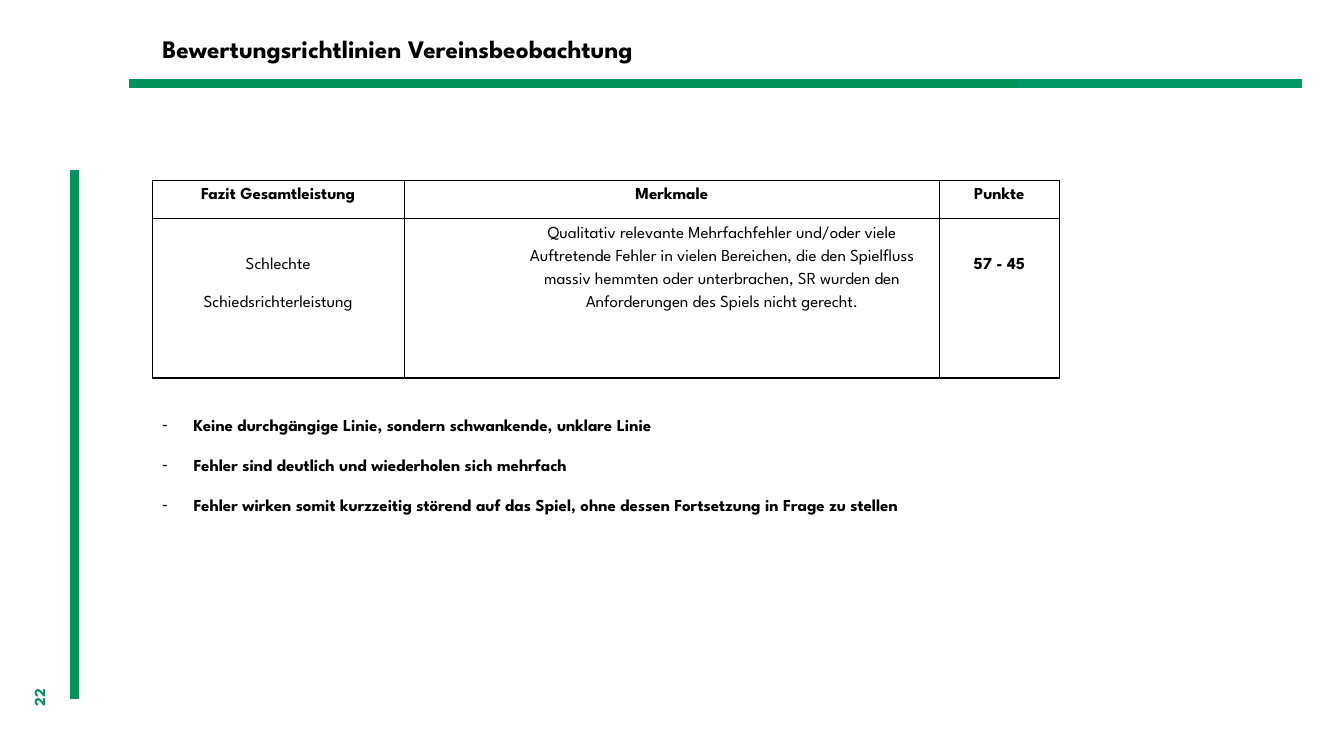
from pptx import Presentation, util as u
from pptx.dml.color import RGBColor
from pptx.enum import shapes, text
from pptx.oxml.ns import qn
from lxml import etree

Pt = u.Pt
GREEN = RGBColor(0x00, 0x92, 0x5B)
MASTER_GREEN = RGBColor(0x01, 0x98, 0x65)
BLACK = RGBColor(0, 0, 0)
CENTER = text.PP_ALIGN.CENTER
LEFT = text.PP_ALIGN.LEFT


class SlideBuilder:
    """Holds the style and the current slide."""

    font = {"name": "League Spartan", "size": Pt(12), "bold": True}

    def __init__(self, prs):
        self.s = prs.slides.add_slide(prs.slide_layouts[5])

    def add_words(self, p, words, color=BLACK, para=None, **font):
        for key, value in (para or {}).items():
            setattr(p, key, value)
        r = p.add_run()
        r.text = words
        for key, value in {**self.font, **font}.items():
            setattr(r.font, key, value)
        r.font.color.rgb = color

    def line(self, x1, y1, x2, y2, color):
        c = self.s.shapes.add_connector(
            shapes.MSO_CONNECTOR.STRAIGHT, Pt(x1), Pt(y1), Pt(x2), Pt(y2))
        c.line.color.rgb = color
        c.line.width = Pt(6)
        etree.SubElement(c._element.spPr, qn("a:effectLst"))

    def title(self, x, y, w, h, words):
        sp = self.s.shapes.title
        sp.left, sp.top, sp.width, sp.height = Pt(x), Pt(y), Pt(w), Pt(h)
        tf = sp.text_frame
        tf.vertical_anchor = text.MSO_ANCHOR.MIDDLE
        tf.auto_size = text.MSO_AUTO_SIZE.NONE
        self.add_words(tf.paragraphs[0], words, size=Pt(18),
                       para={"alignment": LEFT, "line_spacing": 0.9})

    def box(self, x, y, w, h, rotation=0):
        sp = self.s.shapes.add_textbox(Pt(x), Pt(y), Pt(w), Pt(h))
        sp.rotation = rotation
        sp.text_frame.word_wrap = True
        return sp.text_frame

    def bullets(self, x, y, w, h, items):
        tf = self.box(x, y, w, h)
        for i, item in enumerate(items):
            p = tf.add_paragraph() if i else tf.paragraphs[0]
            pPr = p._p.get_or_add_pPr()
            pPr.set("marL", str(Pt(22.5)))
            pPr.set("indent", str(-Pt(22.5)))
            etree.SubElement(pPr, qn("a:buFont")).set("typeface", "Arial")
            etree.SubElement(pPr, qn("a:buChar")).set("char", "-")
            self.add_words(p, item, para={"line_spacing": Pt(28.6)})

    def border(self, cell):
        tcPr = cell._tc.get_or_add_tcPr()
        for i, side in enumerate(("lnL", "lnR", "lnT", "lnB")):
            ln = etree.Element(qn("a:" + side), w=str(Pt(1)))
            fill = etree.SubElement(ln, qn("a:solidFill"))
            etree.SubElement(fill, qn("a:srgbClr"), val=str(BLACK))
            tcPr.insert(i, ln)

    def table(self, x, y, widths, heights, rows):
        t = self.s.shapes.add_table(
            len(rows), len(widths), Pt(x), Pt(y),
            Pt(sum(widths)), Pt(sum(heights))).table
        for col, width in zip(t.columns, widths):
            col.width = Pt(width)
        for row, height, contents in zip(t.rows, heights, rows):
            row.height = Pt(height)
            for cell, (lines, bold, top, indent) in zip(row.cells, contents):
                cell.fill.background()
                self.border(cell)
                margins = {"margin_left": 5, "margin_right": 5,
                           "margin_top": top, "margin_bottom": 0}
                for key, value in margins.items():
                    setattr(cell, key, Pt(value))
                tf = cell.text_frame
                for i, words in enumerate(lines):
                    p = tf.add_paragraph() if i else tf.paragraphs[0]
                    if indent:
                        p._p.get_or_add_pPr().set("marL", str(Pt(indent)))
                    self.add_words(p, words, bold=bold, para={
                        "alignment": CENTER, "line_spacing": 1.5,
                        "space_after": Pt(10)})


def main():
    prs = Presentation()
    prs.slide_width, prs.slide_height = Pt(960), Pt(540)
    s = SlideBuilder(prs)

    # Green frame lines
    for x1, y1, x2, y2, color in (
            (53.3, 121.7, 53.3, 496.8, MASTER_GREEN),
            (930.2, 59.8, 92.2, 59.8, MASTER_GREEN),
            (53.3, 123.1, 53.3, 499, GREEN),
            (727.2, 59.8, 92.2, 59.8, GREEN)):
        s.line(x1, y1, x2, y2, color)

    # Page number, turned upright
    tf = s.box(14.4, 479.5, 35.3, 28.8, rotation=270)
    s.add_words(tf.paragraphs[0], "22", color=GREEN, size=Pt(11))

    # Findings
    s.bullets(108.7, 278.6, 724.3, 138.2, (
        "Keine durchgängige Linie, sondern schwankende, unklare Linie",
        "Fehler sind deutlich und wiederholen sich mehrfach",
        "Fehler wirken somit kurzzeitig störend auf das Spiel, "
        "ohne dessen Fortsetzung in Frage zu stellen"))

    s.title(108.7, 21.6, 623.5, 28.1, "Bewertungsrichtlinien Vereinsbeobachtung")

    # Rating table: lines, bold, top margin, indent
    header = [([name], True, 0, 0)
              for name in ("Fazit Gesamtleistung", "Merkmale", "Punkte")]
    rating = [
        (["Schlechte", "Schiedsrichterleistung"], False, 22.7, 0),
        (["Qualitativ relevante Mehrfachfehler und/oder viele Auftretende "
          "Fehler in vielen Bereichen, die den Spielfluss massiv hemmten oder "
          "unterbrachen, SR wurden den Anforderungen des Spiels nicht "
          "gerecht."], False, 0, 72),
        (["57 - 45"], True, 22.7, 0)]
    s.table(108.7, 128.9, (180, 382.3, 85.7), (27.4, 113.8), (header, rating))

    prs.save("out.pptx")


if __name__ == "__main__":
    main()
